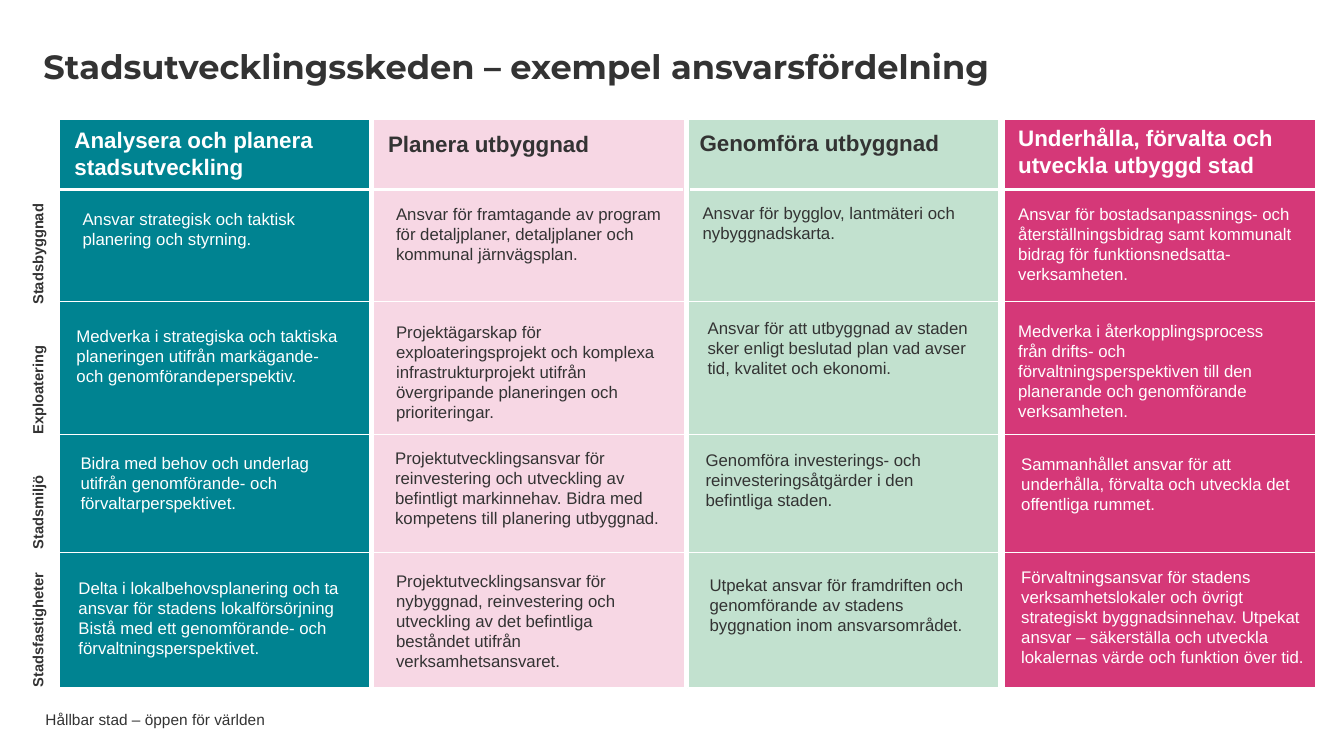
import pptx
import pptx.util
from pptx.dml.color import RGBColor
from pptx.enum.shapes import MSO_CONNECTOR, MSO_SHAPE
from pptx.enum.text import MSO_ANCHOR, MSO_AUTO_SIZE
from lxml import etree

WHITE = RGBColor(0xFF, 0xFF, 0xFF)
DARK = RGBColor(0x33, 0x33, 0x33)
TEAL = RGBColor(0x00, 0x83, 0x91)
PINK = RGBColor(0xF7, 0xD7, 0xE4)
GREEN = RGBColor(0xC2, 0xE1, 0xCF)
MAGENTA = RGBColor(0xD5, 0x38, 0x78)

TITLE = "Stadsutvecklingsskeden – exempel ansvarsfördelning"
FOOTER = "Hållbar stad – öppen för världen"

# Phases: left edge, fill, text colour
PHASES = [(0.58, TEAL, WHITE), (3.7, PINK, DARK), (6.82, GREEN, DARK), (9.96, MAGENTA, WHITE)]
PHASE_W, GRID_BOTTOM = 3.09, 6.83

# Departments: name, label centre and length
DEPARTMENTS = [
    ("Stadsbyggnad", 2.44, 1.36),
    ("Exploatering", 3.75, 1.31),
    ("Stadsmiljö", 4.98, 1.14),
    ("Stadsfastigheter", 6.23, 1.37),
]
LABEL_X, LABEL_H = 0.38, 0.29

# Rows: top edge, then per phase (inset x, inset y, width, lines, text)
ROWS = [
    (1.18, [
        (0.06, 0.02, 2.88, 2, "Analysera och planera stadsutveckling"),
        (0.05, 0.06, 2.81, 1, "Planera utbyggnad"),
        (0.02, 0.05, 2.9, 1, "Genomföra utbyggnad"),
        (0.04, 0, 3.05, 2, "Underhålla, förvalta och utveckla utbyggd stad"),
    ]),
    (1.88, [
        (0.14, 0.14, 2.82, 2, "Ansvar strategisk och taktisk planering och styrning."),
        (0.13, 0.09, 2.84, 3, "Ansvar för framtagande av program för detaljplaner, detaljplaner "
                              "och kommunal järnvägsplan."),
        (0.05, 0.08, 2.86, 2, "Ansvar för bygglov, lantmäteri och nybyggnadskarta."),
        (0.04, 0.09, 3.05, 4, "Ansvar för bostadsanpassnings- och återställningsbidrag samt "
                              "kommunalt bidrag för funktionsnedsatta-verksamheten."),
    ]),
    (2.99, [
        (0.08, 0.19, 2.89, 3, "Medverka i strategiska och taktiska planeringen utifrån "
                              "markägande- och genomförandeperspektiv."),
        (0.13, 0.15, 2.84, 5, "Projektägarskap för exploateringsprojekt och komplexa "
                              "infrastrukturprojekt utifrån övergripande planeringen och "
                              "prioriteringar."),
        (0.1, 0.11, 2.83, 3, "Ansvar för att utbyggnad av staden sker enligt beslutad plan "
                             "vad avser tid, kvalitet och ekonomi."),
        (0.04, 0.14, 2.96, 5, "Medverka i återkopplingsprocess från drifts- och "
                              "förvaltningsperspektiven till den planerande och "
                              "genomförande verksamheten."),
    ]),
    (4.31, [
        (0.12, 0.13, 2.89, 3, "Bidra med behov och underlag utifrån genomförande- och "
                              "förvaltarperspektivet."),
        (0.12, 0.08, 2.95, 4, "Projektutvecklingsansvar för reinvestering och utveckling av "
                              "befintligt markinnehav. Bidra med kompetens till planering "
                              "utbyggnad."),
        (0.08, 0.1, 2.86, 3, "Genomföra investerings- och reinvesteringsåtgärder i den "
                             "befintliga staden."),
        (0.07, 0.14, 2.88, 3, "Sammanhållet ansvar för att underhålla, förvalta och utveckla "
                              "det offentliga rummet."),
    ]),
    (5.48, [
        (0.1, 0.2, 2.89, 4, "Delta i lokalbehovsplanering och ta ansvar för stadens "
                            "lokalförsörjning\nBistå med ett genomförande- och "
                            "förvaltningsperspektivet."),
        (0.13, 0.13, 2.84, 5, "Projektutvecklingsansvar för nybyggnad, reinvestering och "
                              "utveckling av det befintliga beståndet utifrån "
                              "verksamhetsansvaret."),
        (0.12, 0.17, 2.86, 3, "Utpekat ansvar för framdriften och genomförande av stadens "
                              "byggnation inom ansvarsområdet."),
        (0.07, 0.09, 3.02, 5, "Förvaltningsansvar för stadens verksamhetslokaler och övrigt "
                              "strategiskt byggnadsinnehav. Utpekat ansvar – säkerställa och "
                              "utveckla lokalernas värde och funktion över tid."),
    ]),
]

# Rules between rows: x from, x to, y, weight
RULES = [
    (0.58, 6.77, 1.88, 2.25), (6.84, 9.94, 1.88, 2.25), (9.96, 13.05, 1.88, 2.25),
    (0.54, 13.05, 2.99, 0.5), (0.58, 13.05, 4.31, 0.5), (0.58, 13.12, 5.48, 0.5),
]

inch = pptx.util.Inches
prs = pptx.Presentation()
prs.slide_width, prs.slide_height = inch(13.33), inch(7.5)
s = prs.slides.add_slide(prs.slide_layouts[6])


def add_text(x, y, w, h, text, size, color, bold=False, font="Arial"):
    sp = s.shapes.add_textbox(inch(x), inch(y), inch(w), inch(h))
    tf = sp.text_frame
    tf.word_wrap = True
    tf.text = text
    for p in tf.paragraphs:
        for r in p.runs:
            r.font.name, r.font.size, r.font.bold = font, pptx.util.Pt(size), bold
            r.font.color.rgb = color
    return sp


# Title and footer
tf = add_text(0.43, 0.37, 10.82, 0.62, TITLE, 24, DARK, True, "Montserrat").text_frame
tf.margin_left = tf.margin_right = 0
tf.vertical_anchor = MSO_ANCHOR.MIDDLE
tf.paragraphs[0].line_spacing = 0.9
tf = add_text(0.45, 7.06, 9.45, 0.16, FOOTER, 11, DARK).text_frame
tf.margin_left = tf.margin_right = tf.margin_top = tf.margin_bottom = 0
tf.vertical_anchor = MSO_ANCHOR.MIDDLE

# Phase columns
top = ROWS[0][0]
for left, fill, _ in PHASES:
    sp = s.shapes.add_shape(MSO_SHAPE.RECTANGLE, inch(left), inch(top),
                            inch(PHASE_W), inch(GRID_BOTTOM - top))
    sp.shadow.inherit = False
    sp.fill.solid()
    sp.fill.fore_color.rgb = fill
    sp.line.color.rgb = WHITE
    sp.line.width = pptx.util.Pt(1.5)

# Row rules
for x1, x2, y, weight in RULES:
    line = s.shapes.add_connector(MSO_CONNECTOR.STRAIGHT, inch(x1), inch(y), inch(x2), inch(y))
    line.line.color.rgb = WHITE
    line.line.width = pptx.util.Pt(weight)
    etree.SubElement(line._element.spPr, pptx.oxml.ns.qn("a:effectLst"))

# Headings and responsibilities
for i, (row_top, cells) in enumerate(ROWS):
    size, line_h = (16, 0.27) if i == 0 else (12, 0.2)
    for (left, _, color), (dx, dy, w, lines, text) in zip(PHASES, cells):
        sp = add_text(left + dx, row_top + dy, w, 0.1 + lines * line_h, text, size, color, i == 0)
        sp.text_frame.auto_size = MSO_AUTO_SIZE.SHAPE_TO_FIT_TEXT

# Department labels, reading upwards
for name, centre, length in DEPARTMENTS:
    sp = add_text(LABEL_X - length / 2, centre - LABEL_H / 2, length, LABEL_H,
                  name, 10.5, DARK, True)
    sp.rotation = 270

prs.save("out.pptx")
